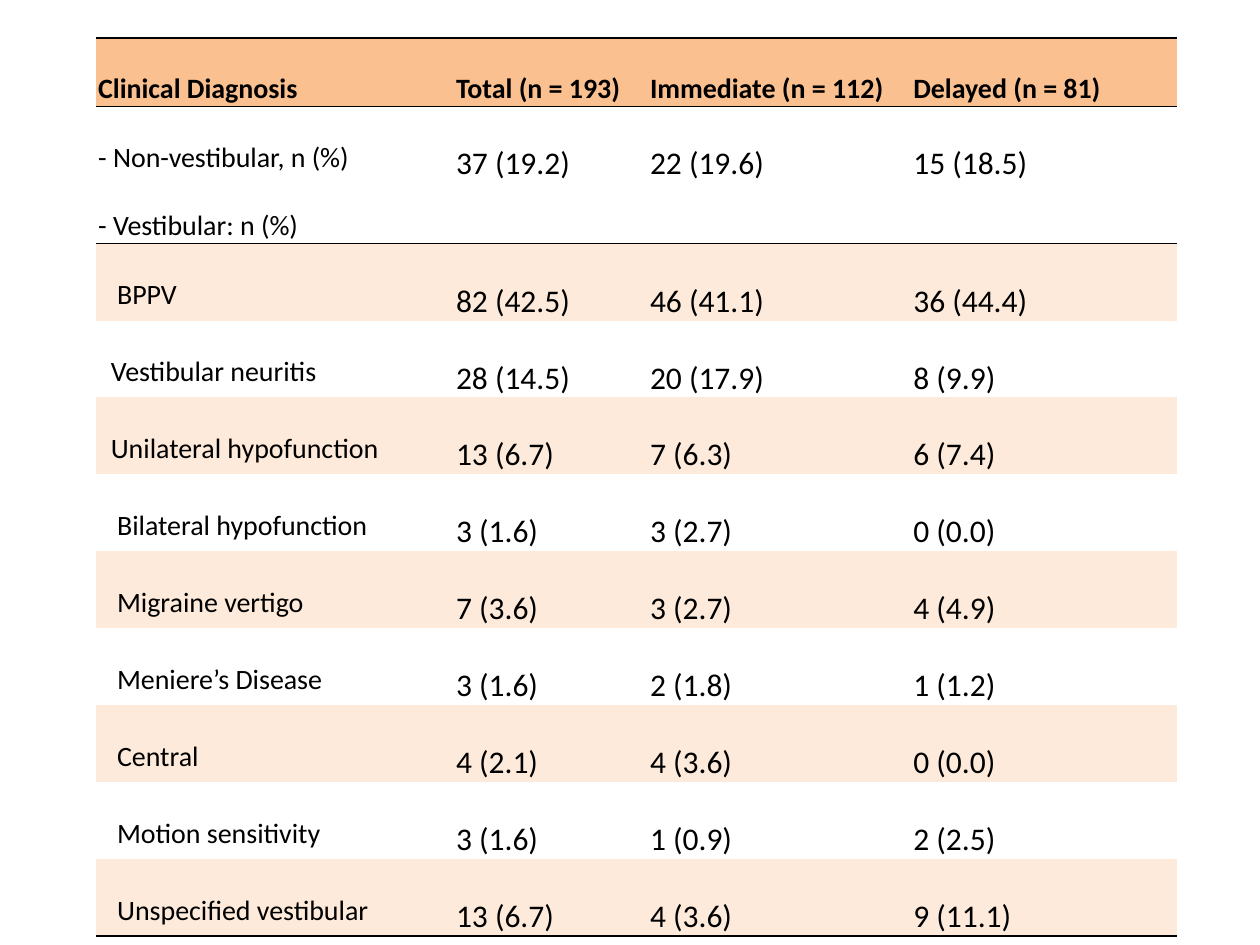
from lxml.etree import SubElement as Sub
from pptx import Presentation
from pptx.dml.color import RGBColor as RGB
from pptx.oxml.ns import qn
from pptx.util import Inches, Pt

# Content: indent steps, label lines, then total / immediate / delayed
HEAD = ("Clinical Diagnosis", "Total (n = 193)", "Immediate (n = 112)", "Delayed (n = 81)")
ROWS = [
    (0, "- Non-vestibular, n (%)\n- Vestibular: n (%)", "37 (19.2)", "22 (19.6)", "15 (18.5)"),
    (3, "BPPV", "82 (42.5)", "46 (41.1)", "36 (44.4)"),
    (2, "Vestibular neuritis", "28 (14.5)", "20 (17.9)", "8 (9.9)"),
    (2, "Unilateral hypofunction", "13 (6.7)", "7 (6.3)", "6 (7.4)"),
    (3, "Bilateral hypofunction", "3 (1.6)", "3 (2.7)", "0 (0.0)"),
    (3, "Migraine vertigo", "7 (3.6)", "3 (2.7)", "4 (4.9)"),
    (3, "Meniere’s Disease", "3 (1.6)", "2 (1.8)", "1 (1.2)"),
    (3, "Central", "4 (2.1)", "4 (3.6)", "0 (0.0)"),
    (3, "Motion sensitivity", "3 (1.6)", "1 (0.9)", "2 (2.5)"),
    (3, "Unspecified vestibular", "13 (6.7)", "4 (3.6)", "9 (11.1)"),
]

THEME = {
    "font": "Calibri", "ink": "000000", "head": "FAC090",
    "bands": ("FFFFFF", "FDEADA"), "label": 16, "value": 18, "rule": 1,
}
PLAIN = "{2D5ABB26-0587-4C30-8999-92F81FD0307C}"
LEFT, TOP = 0.76, 0.3
COLS = (2.84, 1.54, 2.09, 2.11)
HIGH = [0.54, 1.09] + [0.61] * (len(ROWS) - 1)
PAD, STEP = 0.02, 0.05


def rule(cell, side):
    """Draw a thin line on one side (lnT or lnB) of a cell."""
    line = Sub(cell._tc.get_or_add_tcPr(), qn("a:" + side), w=str(Pt(THEME["rule"])))
    Sub(Sub(line, qn("a:solidFill")), qn("a:srgbClr"), val=THEME["ink"])


def fill_cell(cell, text, size, fill, bold=False, indent=0, sides=()):
    for side in sides:
        rule(cell, side)
    cell.fill.solid()
    cell.fill.fore_color.rgb = RGB.from_string(fill)
    pads = {"margin_left": PAD + indent * STEP, "margin_right": PAD,
            "margin_top": 0, "margin_bottom": 0}
    for name, val in pads.items():
        setattr(cell, name, Inches(val))
    cell.text = text
    style = {"name": THEME["font"], "size": Pt(size), "bold": bold}
    for para in cell.text_frame.paragraphs:
        para.line_spacing = 2.0
        for run in para.runs:
            for name, val in style.items():
                setattr(run.font, name, val)
            run.font.color.rgb = RGB.from_string(THEME["ink"])


# Slide
deck = Presentation()
deck.slide_width, deck.slide_height = Inches(10), Inches(7.5)
slide = deck.slides.add_slide(deck.slide_layouts[6])

# Table grid
table = slide.shapes.add_table(
    len(HIGH), len(COLS), Inches(LEFT), Inches(TOP),
    Inches(sum(COLS)), Inches(sum(HIGH))).table
table.first_row = table.horz_banding = False
table._tbl.tblPr.find(qn("a:tableStyleId")).text = PLAIN
for col, wide in zip(table.columns, COLS):
    col.width = Inches(wide)
for row, high in zip(table.rows, HIGH):
    row.height = Inches(high)

# Header row
for c, text in enumerate(HEAD):
    fill_cell(table.cell(0, c), text, THEME["label"], THEME["head"],
              bold=True, sides=("lnT", "lnB"))

# Banded body rows, ruled at first top and last bottom
for r, (indent, *texts) in enumerate(ROWS, 1):
    sides = {1: ("lnT",), len(ROWS): ("lnB",)}.get(r, ())
    for c, text in enumerate(texts):
        fill_cell(table.cell(r, c), text, THEME["value" if c else "label"],
                  THEME["bands"][(r - 1) % 2],
                  indent=0 if c else indent, sides=sides)

deck.save("out.pptx")
